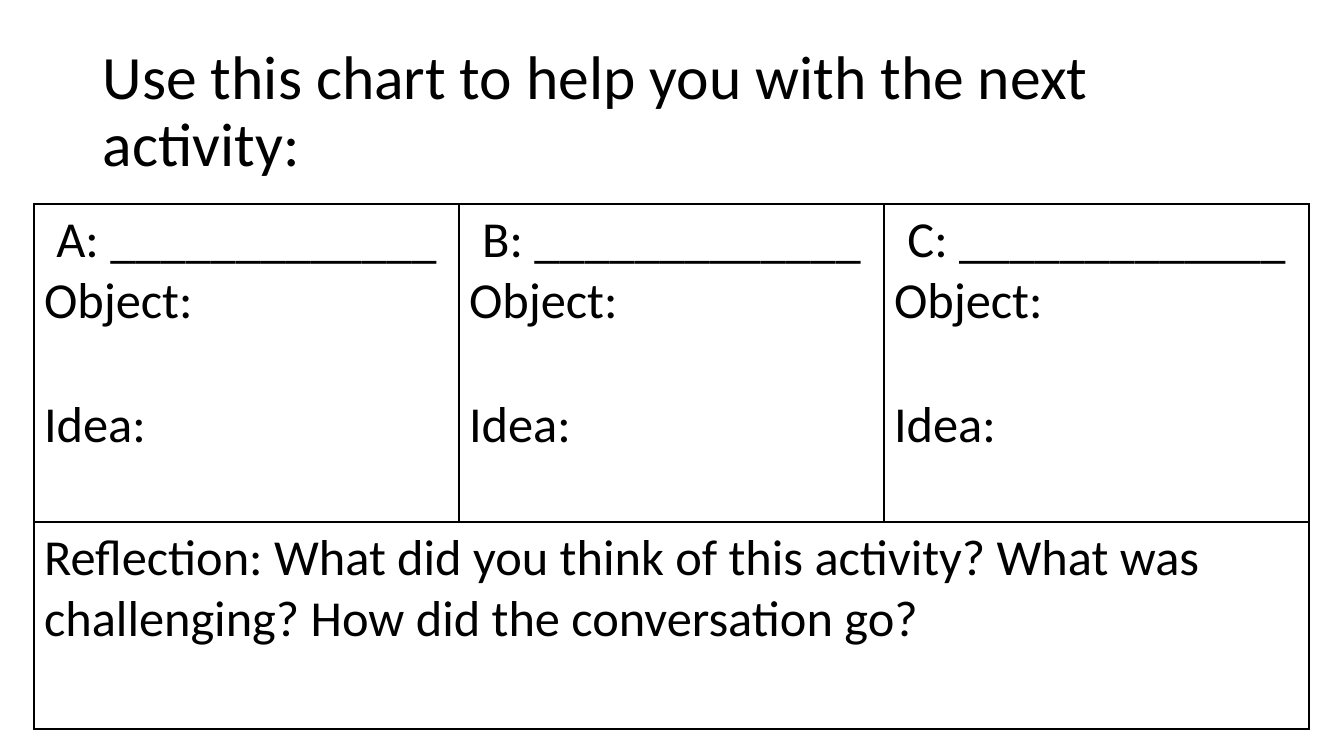
from lxml import etree
from pptx import Presentation
from pptx.dml.color import RGBColor
from pptx.enum.text import MSO_ANCHOR, PP_ALIGN
from pptx.oxml.ns import qn
from pptx.util import Emu, Pt

LEFT, CENTER = PP_ALIGN.LEFT, PP_ALIGN.CENTER
TOP, MIDDLE = MSO_ANCHOR.TOP, MSO_ANCHOR.MIDDLE
EMU_PER_PX = 914400 / 100.8
BLANK_LAYOUT = 6
FONT = "Calibri"
COLORS = {"text": "000000", "border": "000000", "cell": "FFFFFF"}
BODY_SIZE = 36
BLANK_LINE = 44
ROW_HEIGHTS = (318, 207)
TITLE = "Use this chart to help you with the next activity:"
HEADINGS = ("A: _____________", "B: _____________", "C: _____________")
REFLECTION = (
    "Reflection: What did you think of this activity? "
    "What was challenging? How did the conversation go?"
)


def px(length):
    """Turn a length in px into EMU."""
    return Emu(round(length * EMU_PER_PX))


def write(paragraph, text, size=BODY_SIZE, align=LEFT, before=0, spacing=1.0):
    """Write formatted text into a paragraph."""
    paragraph.alignment = align
    paragraph.space_before = Pt(before)
    paragraph.line_spacing = spacing
    run = paragraph.add_run()
    run.text = text
    run.font.name = FONT
    run.font.size = Pt(size)
    run.font.color.rgb = RGBColor.from_string(COLORS["text"])


def style_cell(cell):
    """Give a cell a plain fill and a thin border on every side."""
    cell.vertical_anchor = TOP
    cell.fill.solid()
    cell.fill.fore_color.rgb = RGBColor.from_string(COLORS["cell"])
    properties = cell._tc.get_or_add_tcPr()
    for index, side in enumerate(("lnL", "lnR", "lnT", "lnB")):
        line = etree.Element(qn(f"a:{side}"), w=str(Pt(1)))
        fill = etree.SubElement(line, qn("a:solidFill"))
        etree.SubElement(fill, qn("a:srgbClr"), val=COLORS["border"])
        properties.insert(index, line)


def add_title(slide, left, top, width, height):
    """Place the slide title in its box."""
    frame = slide.shapes.add_textbox(*map(px, (left, top, width, height))).text_frame
    frame.word_wrap = True
    frame.vertical_anchor = MIDDLE
    write(frame.paragraphs[0], TITLE, size=44, spacing=0.9)


def fill_prompt(cell, heading):
    """Write a heading with its object and idea prompts."""
    frame = cell.text_frame
    write(frame.paragraphs[0], heading, align=CENTER)
    write(frame.add_paragraph(), "Object:")
    write(frame.add_paragraph(), "Idea:", before=BLANK_LINE)


def add_worksheet(slide, left, top, width):
    """Place the table of prompts above a full-width reflection row."""
    box = map(px, (left, top, width, sum(ROW_HEIGHTS)))
    table = slide.shapes.add_table(len(ROW_HEIGHTS), len(HEADINGS), *box).table
    table.first_row = False
    table.horz_banding = False
    for column in table.columns:
        column.width = px(width / len(HEADINGS))
    for row, height in zip(table.rows, ROW_HEIGHTS):
        row.height = px(height)
    for cell in table.iter_cells():
        style_cell(cell)
    for index, heading in enumerate(HEADINGS):
        fill_prompt(table.cell(0, index), heading)
    reflection = table.cell(1, 0)
    reflection.merge(table.cell(1, len(HEADINGS) - 1))
    write(reflection.text_frame.paragraphs[0], REFLECTION)


def main():
    """Build and save the presentation."""
    presentation = Presentation()
    presentation.slide_width = px(1344)
    presentation.slide_height = px(756)
    slide = presentation.slides.add_slide(presentation.slide_layouts[BLANK_LAYOUT])
    add_title(slide, 93, 40, 1159, 146)
    add_worksheet(slide, 34, 204, 1275)
    presentation.save("out.pptx")


if __name__ == "__main__":
    main()
